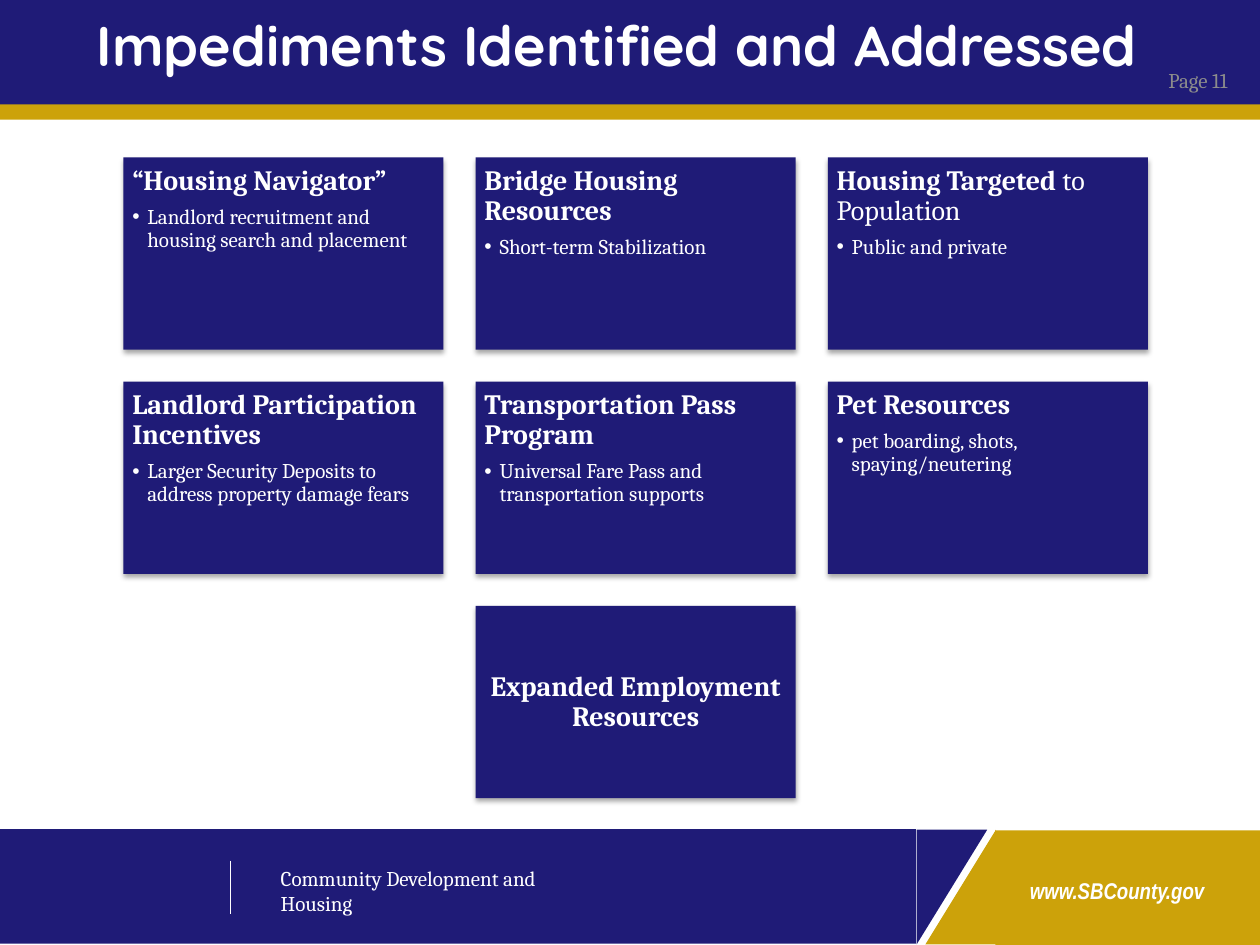
from collections import namedtuple
from dataclasses import dataclass

from lxml.etree import SubElement
from pptx import Presentation
from pptx.dml.color import RGBColor
from pptx.enum.shapes import MSO_CONNECTOR, MSO_SHAPE
from pptx.enum.text import MSO_ANCHOR, PP_ALIGN
from pptx.oxml.ns import qn
from pptx.util import Inches, Pt

Box = namedtuple("Box", "left top width height")


@dataclass(frozen=True)
class Theme:
    navy: str = "1F1B77"
    gold: str = "CCA20A"
    white: str = "FFFFFF"
    gray: str = "8C8C8C"
    serif: str = "Cambria"
    narrow: str = "Arial Narrow"
    round: str = "Quicksand"
    title: int = 32
    head: int = 16
    link: int = 13
    body: int = 12


theme = Theme()

CARDS = [
    ([("“Housing Navigator”", True)],
     "Landlord recruitment and housing search and placement"),
    ([("Bridge Housing Resources", True)], "Short-term Stabilization"),
    ([("Housing Targeted ", True), ("to Population", False)],
     "Public and private"),
    ([("Landlord Participation Incentives", True)],
     "Larger Security Deposits to address property damage fears"),
    ([("Transportation Pass Program", True)],
     "Universal Fare Pass and transportation supports"),
    ([("Pet Resources", True)], "pet boarding, shots, spaying/neutering"),
    ([("Expanded Employment Resources", True)], None),
]


def place(box, left, top, width, height):
    return Box(box.left + Inches(left), box.top + Inches(top),
               Inches(width), Inches(height))


def style(font, size, color=theme.white, name=theme.serif, bold=False):
    font.size = Pt(size)
    font.name = name
    font.bold = bold
    font.color.rgb = RGBColor.from_string(color)


def add_block(slide, box, color, kind=MSO_SHAPE.RECTANGLE, turn=0):
    block = slide.shapes.add_shape(kind, *box)
    block.shadow.inherit = False
    block.fill.solid()
    block.fill.fore_color.rgb = RGBColor.from_string(color)
    block.line.fill.background()
    block.rotation = turn
    return block


def add_label(slide, box, text, align=PP_ALIGN.LEFT, anchor=MSO_ANCHOR.TOP):
    frame = slide.shapes.add_textbox(*box).text_frame
    frame.word_wrap = True
    frame.vertical_anchor = anchor
    frame.text = text
    line = frame.paragraphs[0]
    line.alignment = align
    return line.runs[0].font


def add_shade(shape):
    effects = shape._element.spPr.find(qn("a:effectLst"))
    shade = SubElement(effects, qn("a:outerShdw"), blurRad=str(Pt(3.1)),
                       dist=str(Pt(1.8)), dir="5400000", rotWithShape="0")
    color = SubElement(shade, qn("a:srgbClr"), val="000000")
    SubElement(color, qn("a:alpha"), val="35000")


def add_bullet(line):
    props = line._p.get_or_add_pPr()
    props.set("marL", str(Inches(0.12)))
    props.set("indent", str(Inches(-0.12)))
    SubElement(props, qn("a:buFont"), typeface="Arial")
    SubElement(props, qn("a:buChar"), char="•")


def add_header(slide, box):
    add_block(slide, place(box, 0, 0.79, 10, 0.16), theme.gold)
    add_block(slide, place(box, 0, 0, 10, 0.83), theme.navy)
    font = add_label(slide, place(box, 8.67, 0.44, 1.17, 0.4), "Page 11",
                     PP_ALIGN.RIGHT, MSO_ANCHOR.MIDDLE)
    style(font, theme.body, theme.gray)
    font = add_label(slide, place(box, 0.67, 0, 9, 0.7),
                     "Impediments Identified and Addressed",
                     anchor=MSO_ANCHOR.MIDDLE)
    style(font, theme.title, name=theme.round, bold=True)


def add_footer(slide, box):
    wedge = MSO_SHAPE.RIGHT_TRIANGLE
    add_block(slide, place(box, 7.9, 0.01, 2.1, 0.91), theme.gold)
    add_block(slide, place(box, 7.17, 0.18, 0.91, 0.56), theme.gold, wedge, 270)
    add_block(slide, place(box, 0, 0, 7.27, 0.91), theme.navy)
    add_block(slide, place(box, 7.1, 0.18, 0.91, 0.56), theme.navy, wedge, 90)

    mark = place(box, 1.83, 0.25, 0, 0.42)
    rule = slide.shapes.add_connector(
        MSO_CONNECTOR.STRAIGHT, mark.left, mark.top,
        mark.left, mark.top + mark.height)
    rule.line.color.rgb = RGBColor.from_string(theme.white)
    rule.line.width = Pt(0.25)
    SubElement(rule._element.spPr, qn("a:effectLst"))

    font = add_label(slide, place(box, 7.74, 0.33, 2.25, 0.32),
                     "www.SBCounty.gov", PP_ALIGN.CENTER)
    style(font, theme.link, name=theme.narrow, bold=True)
    font.italic = True
    font = add_label(slide, place(box, 2.13, 0.24, 2.77, 0.3),
                     "Community Development and Housing")
    style(font, theme.body)


def add_card(slide, box, head, note):
    card = add_block(slide, box, theme.navy)
    add_shade(card)
    frame = card.text_frame
    frame.word_wrap = True
    frame.margin_left = frame.margin_right = Inches(0.07)
    frame.margin_top = frame.margin_bottom = Inches(0.07)
    frame.vertical_anchor = MSO_ANCHOR.TOP if note else MSO_ANCHOR.MIDDLE

    line = frame.paragraphs[0]
    line.alignment = PP_ALIGN.LEFT if note else PP_ALIGN.CENTER
    line.line_spacing = 0.9
    line.space_after = Pt(5.6)
    for text, bold in head:
        run = line.add_run()
        run.text = text
        style(run.font, theme.head, bold=bold)

    if note:
        line = frame.add_paragraph()
        line.text = note
        line.alignment = PP_ALIGN.LEFT
        line.line_spacing = 0.9
        line.space_after = Pt(1.8)
        add_bullet(line)
        style(line.runs[0].font, theme.body)


def add_grid(slide, box, cards, cols=3, gap=0.255):
    wide, high = 2.54, 1.525
    for spot, (head, note) in enumerate(cards):
        row, col = divmod(spot, cols)
        count = min(cols, len(cards) - row * cols)
        col += (cols - count) / 2
        cell = place(box, col * (wide + gap), row * (high + gap), wide, high)
        add_card(slide, cell, head, note)


def main():
    deck = Presentation()
    deck.slide_width = Inches(10)
    deck.slide_height = Inches(7.5)
    slide = deck.slides.add_slide(deck.slide_layouts[6])
    page = Box(0, 0, deck.slide_width, deck.slide_height)
    add_header(slide, place(page, 0, 0, 10, 0.95))
    add_footer(slide, place(page, 0, 6.58, 10, 0.92))
    add_grid(slide, place(page, 0.98, 1.25, 8.13, 5.08), CARDS)
    deck.save("out.pptx")


if __name__ == "__main__":
    main()
